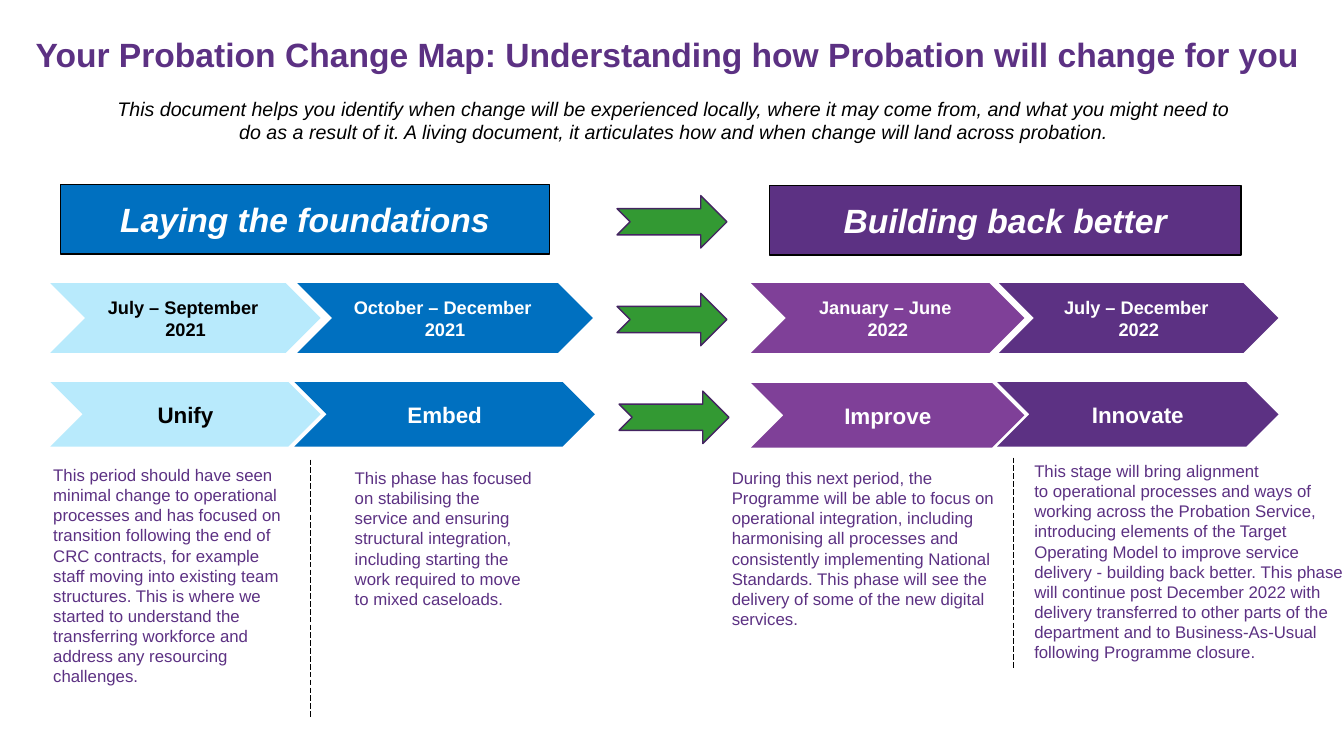
from dataclasses import dataclass

from lxml.etree import SubElement
from pptx import Presentation
from pptx.dml.color import RGBColor
from pptx.enum.dml import MSO_LINE_DASH_STYLE as Dash
from pptx.enum.shapes import MSO_CONNECTOR, MSO_SHAPE
from pptx.enum.text import MSO_ANCHOR, MSO_AUTO_SIZE, PP_ALIGN
from pptx.oxml.ns import qn
from pptx.util import Inches, Pt

COLORS = {
    "black": "000000",
    "white": "FFFFFF",
    "sky": "B8EAFC",
    "blue": "0070C0",
    "violet": "7F4098",
    "purple": "5C3183",
    "green": "339933",
    "arrow_edge": "442461",
}
FONT = "Arial"
TIE = "~"
HARD_SPACE = chr(160)


@dataclass
class Phase:
    name: str
    months: str
    year: str
    fill: str
    ink: str
    date_span: tuple
    name_box: tuple
    text_box: tuple
    text: str


PHASES = [
    Phase(
        "Unify", "July – September ", "2021", "sky", "black",
        (0.5, 2.68), (0.5, 3.79, 2.68, 0.64), (0.43, 4.56, 2.46, 2.32),
        "This period should have seen minimal change to operational processes and has "
        "focused on transition following the end of CRC contracts, for example staff "
        "moving into existing team structures. This is where we started to understand "
        "the transferring workforce and address any resourcing challenges.",
    ),
    Phase(
        "Embed", "October – December ", "2021", "blue", "white",
        (2.95, 2.93), (2.92, 3.79, 2.98, 0.64), (3.42, 4.59, 2, 1.51),
        "This phase has focused on stabilising the service and ensuring structural "
        "integration, including starting the work required to move to mixed caseloads.",
    ),
    Phase(
        "Improve", "January – June ", "2022", "violet", "white",
        (7.45, 2.71), (7.45, 3.8, 2.71, 0.64), (7.16, 4.59, 2.87, 1.72),
        "During this next period, the Programme will be able to focus on operational "
        "integration, including harmonising all processes and consistently implementing "
        "National Standards. This phase will see the delivery of some of the new digital "
        "services.",
    ),
    Phase(
        "Innovate", "July – December ", "2022", "purple", "white",
        (9.91, 2.77), (9.89, 3.79, 2.79, 0.64), (10.16, 4.52, 3.4, 2.12),
        "This stage will bring alignment to~operational processes and ways~of working "
        "across the Probation~Service, introducing elements of~the Target Operating "
        "Model to~improve service delivery - building~back better.~This phase "
        "will~continue post December 2022~with delivery transferred to other~parts "
        "of the department and to~Business-As-Usual following~Programme closure.",
    ),
]


def rgb(name):
    return RGBColor.from_string(COLORS[name])


def write(shape, lines, size, color, align=PP_ALIGN.CENTER, bold=False, italic=False):
    frame = shape.text_frame
    frame.word_wrap = True
    for index, line in enumerate(lines):
        paragraph = frame.paragraphs[0] if index == 0 else frame.add_paragraph()
        paragraph.alignment = align
        run = paragraph.add_run()
        run.text = line.replace(TIE, HARD_SPACE)
        font = run.font
        font.name, font.size = FONT, Pt(size)
        font.bold, font.italic = bold, italic
        font.color.rgb = rgb(color)
    return frame


def add_text(slide, box, text, size, color, **style):
    shape = slide.shapes.add_textbox(*map(Inches, box))
    frame = write(shape, [text], size, color, **style)
    frame.auto_size = MSO_AUTO_SIZE.SHAPE_TO_FIT_TEXT


def add_title(slide, text):
    shape = slide.shapes.add_textbox(*map(Inches, (0.29, 0.22, 12.75, 0.69)))
    frame = write(shape, [text], 24, "purple", bold=True)
    frame.vertical_anchor = MSO_ANCHOR.MIDDLE
    frame.margin_left = frame.margin_right = frame.margin_top = frame.margin_bottom = 0
    frame.paragraphs[0].line_spacing = 0.9


def add_figure(slide, kind, box, fill, edge=None):
    shape = slide.shapes.add_shape(kind, *map(Inches, box))
    shape.shadow.inherit = False
    shape.fill.solid()
    shape.fill.fore_color.rgb = rgb(fill)
    if edge:
        shape.line.color.rgb = rgb(edge)
        shape.line.width = Pt(1)
    else:
        shape.line.fill.background()
    shape.text_frame.vertical_anchor = MSO_ANCHOR.MIDDLE
    return shape


def add_banner(slide, box, text, fill):
    shape = add_figure(slide, MSO_SHAPE.RECTANGLE, box, fill, "black")
    write(shape, [text], 24, "white", bold=True, italic=True)


def add_chevron(slide, box, lines, size, fill, ink):
    shape = add_figure(slide, MSO_SHAPE.CHEVRON, box, fill)
    write(shape, lines, size, ink, bold=True)


def add_phase(slide, phase):
    left, width = phase.date_span
    add_chevron(slide, (left, 2.81, width, 0.69), [phase.months, phase.year], 13,
                phase.fill, phase.ink)
    add_chevron(slide, phase.name_box, [phase.name], 16, phase.fill, phase.ink)
    add_text(slide, phase.text_box, phase.text, 12, "purple", align=PP_ALIGN.LEFT)


def add_divider(slide, x, top, bottom):
    connector = slide.shapes.add_connector(
        MSO_CONNECTOR.STRAIGHT, Inches(x), Inches(top), Inches(x), Inches(bottom))
    connector.line.color.rgb = rgb("black")
    connector.line.width = Pt(0.5)
    connector.line.dash_style = Dash.LONG_DASH
    SubElement(connector._element.spPr, qn("a:effectLst"))


def main():
    presentation = Presentation()
    presentation.slide_width = Inches(13.33)
    presentation.slide_height = Inches(7.5)
    slide = presentation.slides.add_slide(presentation.slide_layouts[6])

    add_title(slide, "Your Probation Change Map: Understanding how Probation will change for you ")
    add_text(
        slide, (1.06, 0.91, 11.25, 0.57),
        "This document helps you identify when change will be experienced locally, where "
        "it may come from, and what you might need to do as a result of it. A living "
        "document, it articulates how and when change will land across probation.",
        14, "black", italic=True,
    )
    add_banner(slide, (0.6, 1.83, 4.85, 0.69), "Laying the foundations", "blue")
    add_banner(slide, (7.63, 1.84, 4.68, 0.69), "Building back better", "purple")
    for phase in PHASES:
        add_phase(slide, phase)
    for left, top in ((6.12, 1.94), (6.12, 2.91), (6.14, 3.88)):
        add_figure(slide, MSO_SHAPE.NOTCHED_RIGHT_ARROW, (left, top, 1.09, 0.52),
                   "green", "arrow_edge")
    add_divider(slide, 3.08, 4.56, 7.11)
    add_divider(slide, 10.05, 4.54, 6.64)

    presentation.save("out.pptx")


if __name__ == "__main__":
    main()
